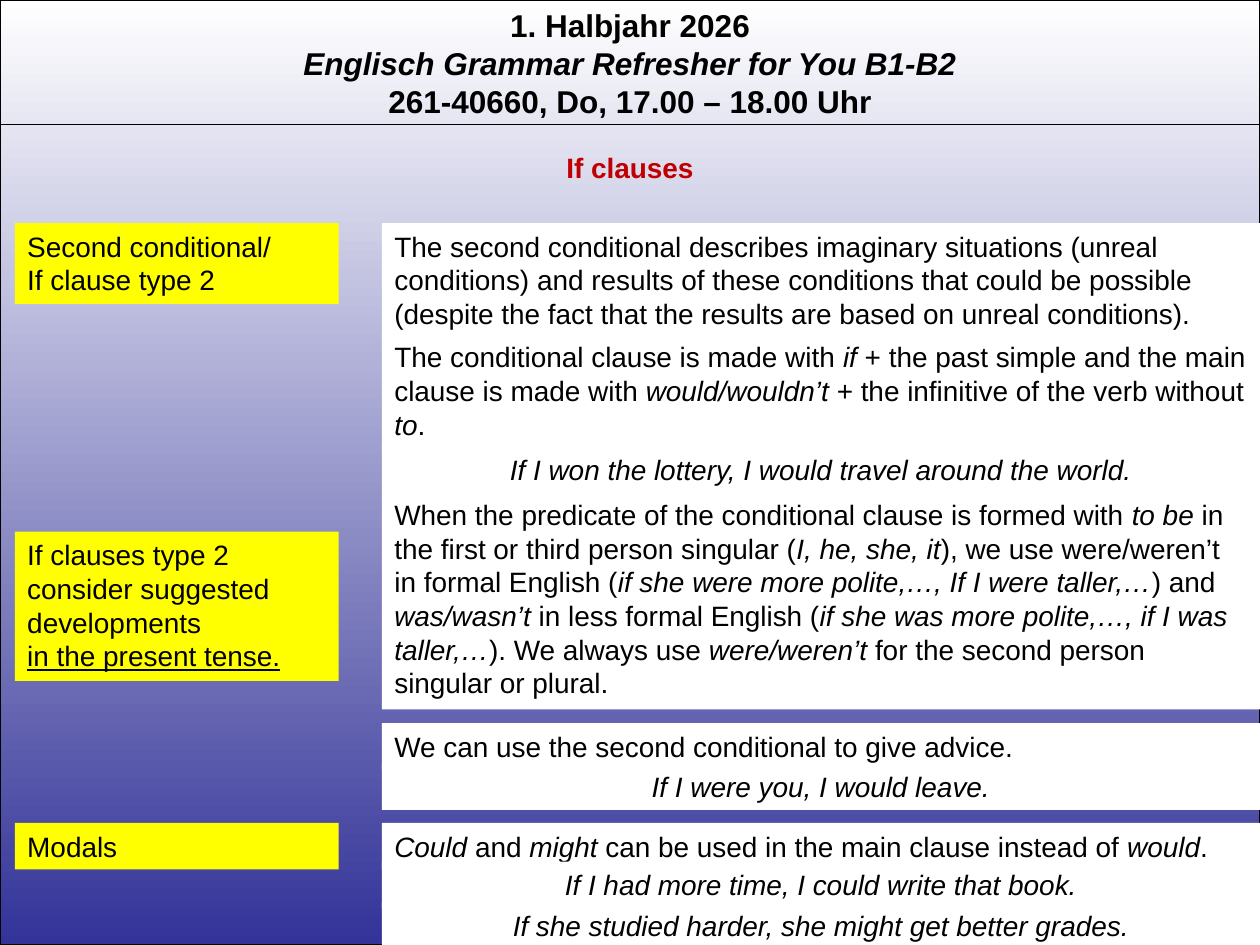
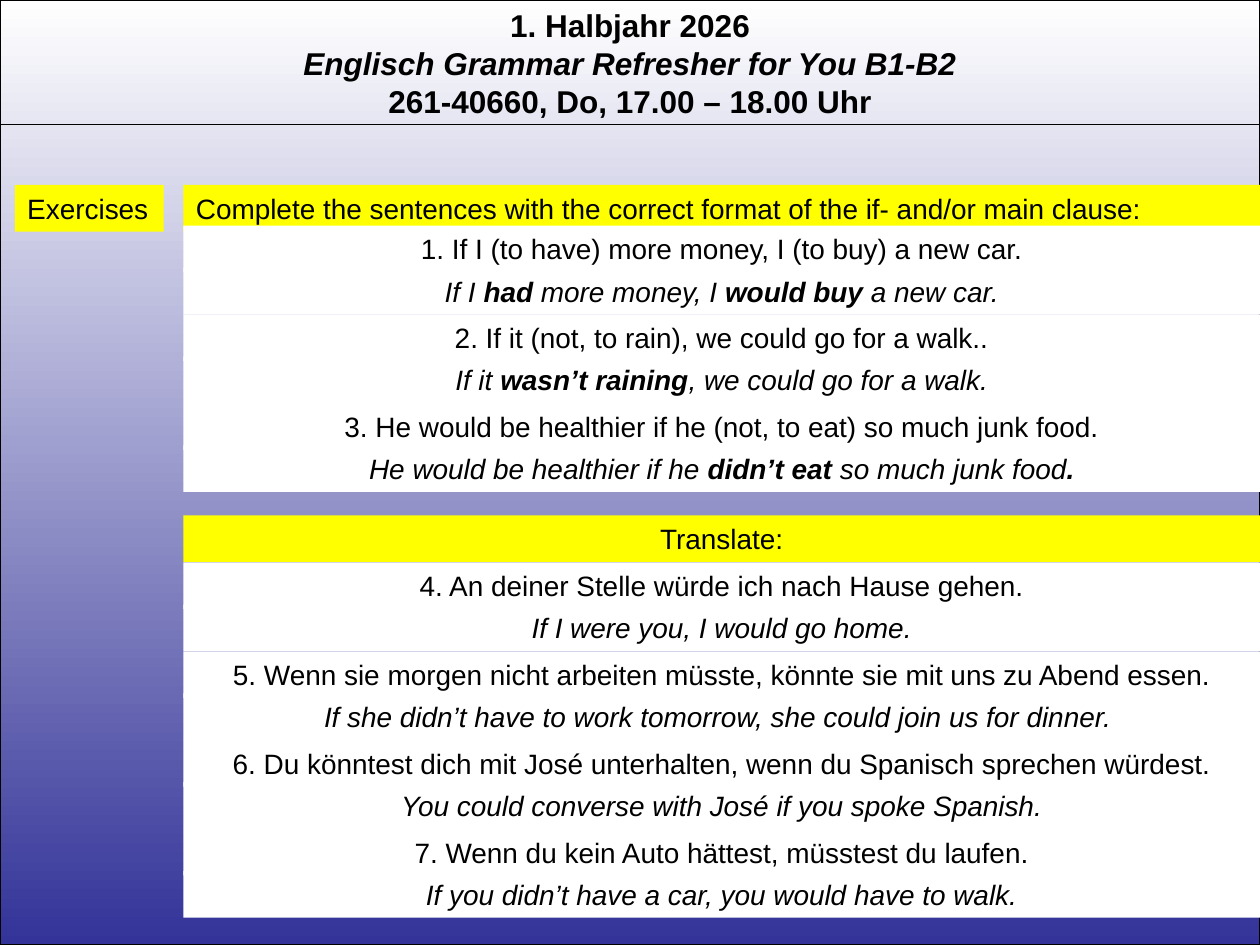
from dataclasses import dataclass
from typing import NamedTuple

import pptx
import pptx.dml.color
import pptx.enum.shapes
import pptx.enum.text
import pptx.oxml
import pptx.presentation
import pptx.shapes.autoshape
import pptx.slide
import pptx.text.text
import pptx.util

Cm = pptx.util.Cm
RGB = pptx.dml.color.RGBColor
Align = pptx.enum.text.PP_ALIGN
Anchor = pptx.enum.text.MSO_ANCHOR
Preset = pptx.enum.shapes.MSO_SHAPE


@dataclass(frozen=True)
class Theme:
    ink: RGB = RGB(0x00, 0x00, 0x00)
    paper: RGB = RGB(0xFF, 0xFF, 0xFF)
    depth: RGB = RGB(0x33, 0x33, 0x99)
    marker: RGB = RGB(0xFF, 0xFF, 0x00)
    topic: RGB = RGB(0xC0, 0x00, 0x00)
    font: str = "Arial"
    heading: pptx.util.Pt = pptx.util.Pt(18)
    text: pptx.util.Pt = pptx.util.Pt(16)
    rule: pptx.util.Pt = pptx.util.Pt(0.75)


class Run(NamedTuple):
    text: str
    italic: bool = False
    bold: bool = False
    underline: bool = False


Line = list[Run]


class Panel(NamedTuple):
    """A filled text panel; top and row count are in cm and text rows."""
    top: float
    rows: int
    lines: list[Line]
    centred: bool = False
    fill: RGB = Theme.paper


class Column(NamedTuple):
    left: float
    width: float


class Exercise(NamedTuple):
    task: str
    answer: Line


THEME = Theme()
WIDTH, HEIGHT = 25.4, 19.05
HEADER_RULE = 2.51
ROW_HEIGHT, PADDING = 0.69, 0.25
EXERCISE_PITCH, ANSWER_OFFSET = 1.79, 0.85

KEYWORDS = Column(0.3, 6.53)
EXPLANATIONS = Column(7.7, 17.7)
EXERCISE_LABEL = Column(0.3, 3.0)
EXERCISES = Column(3.7, 21.7)


def plain(text: str) -> Run:
    return Run(text)


def it(text: str) -> Run:
    return Run(text, italic=True)


def key(text: str) -> Run:
    """The solution within an answer."""
    return Run(text, italic=True, bold=True)


def keyword(top: float, rows: int, *lines: Run) -> Panel:
    return Panel(top, rows, [[line] for line in lines], fill=THEME.marker)


def explanation(top: float, rows: int, *runs: Run) -> Panel:
    return Panel(top, rows, [list(runs)])


def example(top: float, *runs: Run) -> Panel:
    return Panel(top, 1, [list(runs)], centred=True)


HEADING = [
    [Run("1. Halbjahr 2026", bold=True)],
    [key("Englisch Grammar Refresher for You B1-B2")],
    [Run("261-40660, Do, 17.00 – 18.00 Uhr", bold=True)],
]

CLAUSE_KEYWORDS = [
    keyword(4.5, 2, plain("Second conditional/"), plain("If clause type 2")),
    keyword(10.72, 4, plain("If clauses type 2 consider suggested developments"),
            Run("in the present tense.", underline=True)),
    keyword(16.59, 1, plain("Modals")),
]

CLAUSE_EXPLANATIONS = [
    explanation(4.5, 3, plain(
        "The second conditional describes imaginary situations (unreal conditions) and results "
        "of these conditions that could be possible (despite the fact that the results are "
        "based on unreal conditions).")),
    explanation(
        6.73, 3, plain("The conditional clause is made with "), it("if"),
        plain(" + the past simple and the main clause is made with "), it("would/wouldn’t "),
        plain("+ the infinitive of the verb without "), it("to"), plain(".")),
    example(8.99, it("If I won the lottery, I would travel around the world.")),
    explanation(
        9.91, 6, plain("When the predicate of the conditional clause is formed with "),
        it("to be "), plain("in the first or third person singular ("), it("I, he, she, it"),
        plain("), we use were/weren’t in formal English ("),
        it("if she were more polite,…, If I were taller,…"), plain(") and "),
        it("was/wasn’t "), plain("in less formal English ("),
        it("if she was more polite,…, if I was taller,…"), plain("). We always use "),
        it("were/weren’t "), plain("for the second person singular or plural.")),
    explanation(14.58, 1, plain("We can use the second conditional to give advice.")),
    example(15.39, it("If I were you, I would leave.")),
    explanation(
        16.59, 1, it("Could"), plain(" and "), it("might"),
        plain(" can be used in the main clause instead of "), it("would"), plain(".")),
    example(17.37, it("If I had more time, I could write that book.")),
    example(18.19, it("If she studied harder, she might get better grades.")),
]

COMPLETIONS = [
    Exercise("1. If I (to have) more money, I (to buy) a new car.",
             [it("If I "), key("had"), it(" more money, I "), key("would buy "),
              it("a new car.")]),
    Exercise("2. If it (not, to rain), we could go for a walk..",
             [it("If it "), key("wasn’t raining"), it(", we could go for a walk.")]),
    Exercise("3. He would be healthier if he (not, to eat) so much junk food.",
             [it("He would be healthier if he "), key("didn’t eat "),
              it("so much junk food"), key(".")]),
]

TRANSLATIONS = [
    Exercise("4. An deiner Stelle würde ich nach Hause gehen.",
             [it("If I were you, I would go home.")]),
    Exercise("5. Wenn sie morgen nicht arbeiten müsste, könnte sie mit uns zu Abend essen.",
             [it("If she didn’t have to work tomorrow, she could join us for dinner. ")]),
    Exercise("6. Du könntest dich mit José unterhalten, wenn du Spanisch sprechen würdest.",
             [it("You could converse with José if you spoke Spanish.")]),
    Exercise("7. Wenn du kein Auto hättest, müsstest du laufen.",
             [it("If you didn’t have a car, you would have to walk.")]),
]


def write(frame: pptx.text.text.TextFrame, lines: list[Line], size: pptx.util.Pt,
          align: Align, colour: RGB = THEME.ink) -> None:
    frame.word_wrap = True
    frame.auto_size = pptx.enum.text.MSO_AUTO_SIZE.NONE
    frame.vertical_anchor = Anchor.TOP
    for index, line in enumerate(lines):
        paragraph = frame.add_paragraph() if index else frame.paragraphs[0]
        paragraph.alignment = align
        for part in line:
            run = paragraph.add_run()
            run.text = part.text
            font = run.font
            font.name, font.size = THEME.font, size
            font.italic, font.bold, font.underline = part.italic, part.bold, part.underline
            font.color.rgb = colour


def draw_panels(slide: pptx.slide.Slide, column: Column, panels: list[Panel]) -> None:
    for panel in panels:
        box = slide.shapes.add_shape(
            Preset.RECTANGLE, Cm(column.left), Cm(panel.top), Cm(column.width),
            Cm(PADDING + ROW_HEIGHT * panel.rows))
        box.shadow.inherit = False
        box.fill.solid()
        box.fill.fore_color.rgb = panel.fill
        box.line.fill.background()
        write(box.text_frame, panel.lines, THEME.text,
              Align.CENTER if panel.centred else Align.LEFT)


def exercise_panels(first_top: float, exercises: list[Exercise]) -> list[Panel]:
    panels = []
    for index, exercise in enumerate(exercises):
        top = first_top + index * EXERCISE_PITCH
        panels += [example(top, plain(exercise.task)),
                   example(top + ANSWER_OFFSET, *exercise.answer)]
    return panels


def paint_master(deck: pptx.presentation.Presentation) -> None:
    fill = deck.slide_master.background.fill
    fill.gradient()
    fill.gradient_angle = 270
    for stop, colour in zip(fill.gradient_stops, (THEME.paper, THEME.depth)):
        stop.color.rgb = colour


def add_course_slide(deck: pptx.presentation.Presentation) -> pptx.slide.Slide:
    """Add a slide with the frame, the course heading and its rule."""
    slide = deck.slides.add_slide(deck.slide_layouts.get_by_name("Title Only"))
    heading = slide.shapes.title
    heading.left, heading.top = Cm(0), Cm(0)
    heading.width, heading.height = Cm(WIDTH), Cm(2.57)
    write(heading.text_frame, HEADING, THEME.heading, Align.CENTER)

    border = slide.shapes.add_shape(Preset.RECTANGLE, Cm(0), Cm(0), Cm(WIDTH), Cm(HEIGHT))
    border.shadow.inherit = False
    border.fill.background()
    rule = slide.shapes.add_connector(
        pptx.enum.shapes.MSO_CONNECTOR.STRAIGHT,
        Cm(0), Cm(HEADER_RULE), Cm(WIDTH), Cm(HEADER_RULE))
    for outlined in (border, rule):
        outlined.line.color.rgb = THEME.ink
        outlined.line.width = THEME.rule
    rule_properties = rule.element.spPr
    rule_properties.append(pptx.oxml.parse_xml(
        '<a:effectLst xmlns:a="http://schemas.openxmlformats.org/drawingml/2006/main"/>'))
    return slide


def add_clauses_slide(deck: pptx.presentation.Presentation) -> None:
    slide = add_course_slide(deck)
    topic = slide.shapes.add_textbox(Cm(0), Cm(2.92), Cm(WIDTH), Cm(PADDING + ROW_HEIGHT))
    write(topic.text_frame, [[Run("If clauses", bold=True)]], THEME.text,
          Align.CENTER, THEME.topic)
    draw_panels(slide, KEYWORDS, CLAUSE_KEYWORDS)
    draw_panels(slide, EXPLANATIONS, CLAUSE_EXPLANATIONS)


def add_exercises_slide(deck: pptx.presentation.Presentation) -> None:
    slide = add_course_slide(deck)
    draw_panels(slide, EXERCISE_LABEL, [keyword(3.73, 1, plain("Exercises"))])
    complete = keyword(3.73, 1, plain(
        "Complete the sentences with the correct format of the if- and/or main clause:"))
    translate = keyword(10.39, 1, plain("Translate:"))._replace(centred=True)
    draw_panels(slide, EXERCISES, [
        complete, *exercise_panels(4.55, COMPLETIONS),
        translate, *exercise_panels(11.34, TRANSLATIONS)])


def main() -> None:
    deck = pptx.Presentation()
    deck.slide_width, deck.slide_height = Cm(WIDTH), Cm(HEIGHT)
    paint_master(deck)
    add_clauses_slide(deck)
    add_exercises_slide(deck)
    deck.save("out.pptx")


if __name__ == "__main__":
    main()
